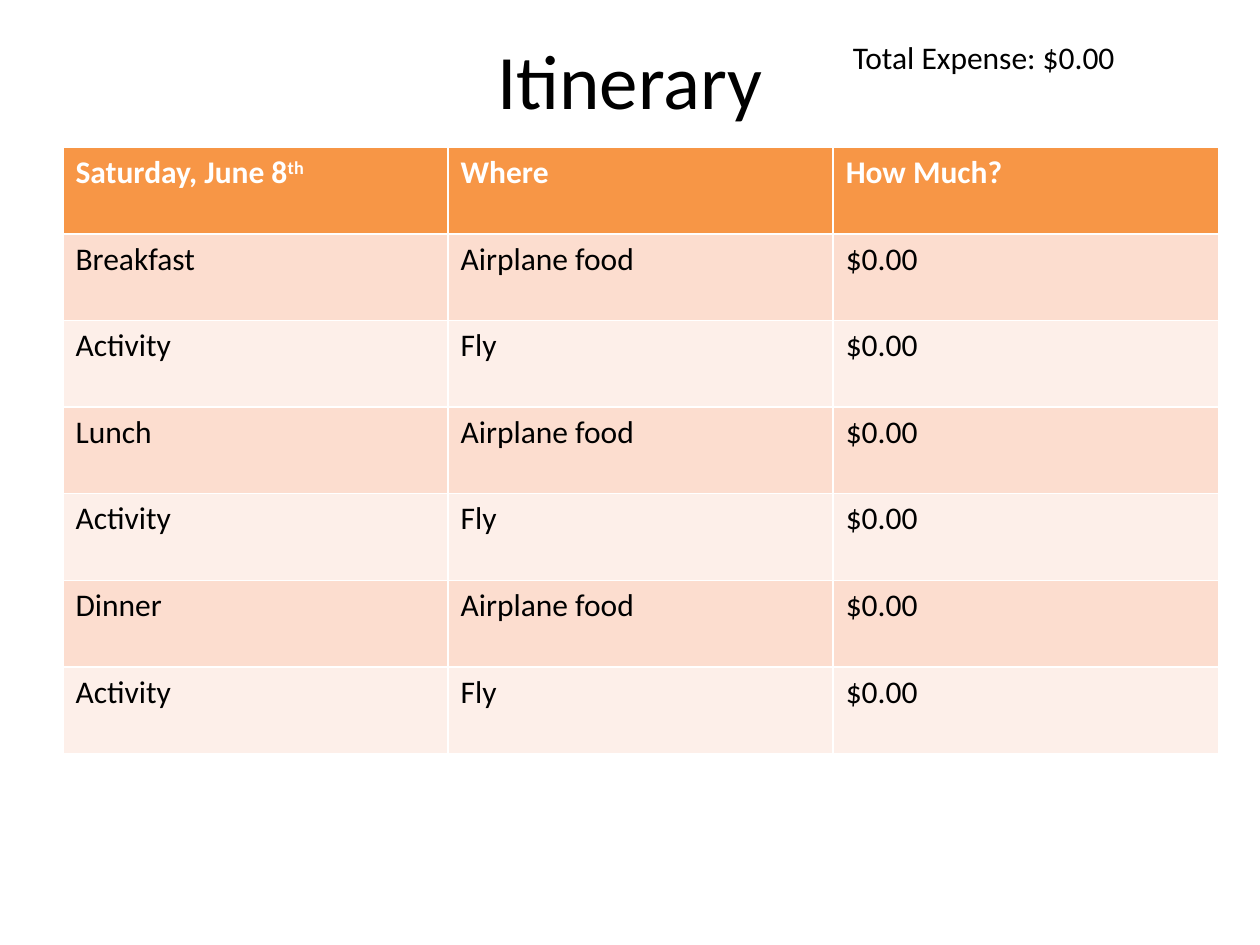
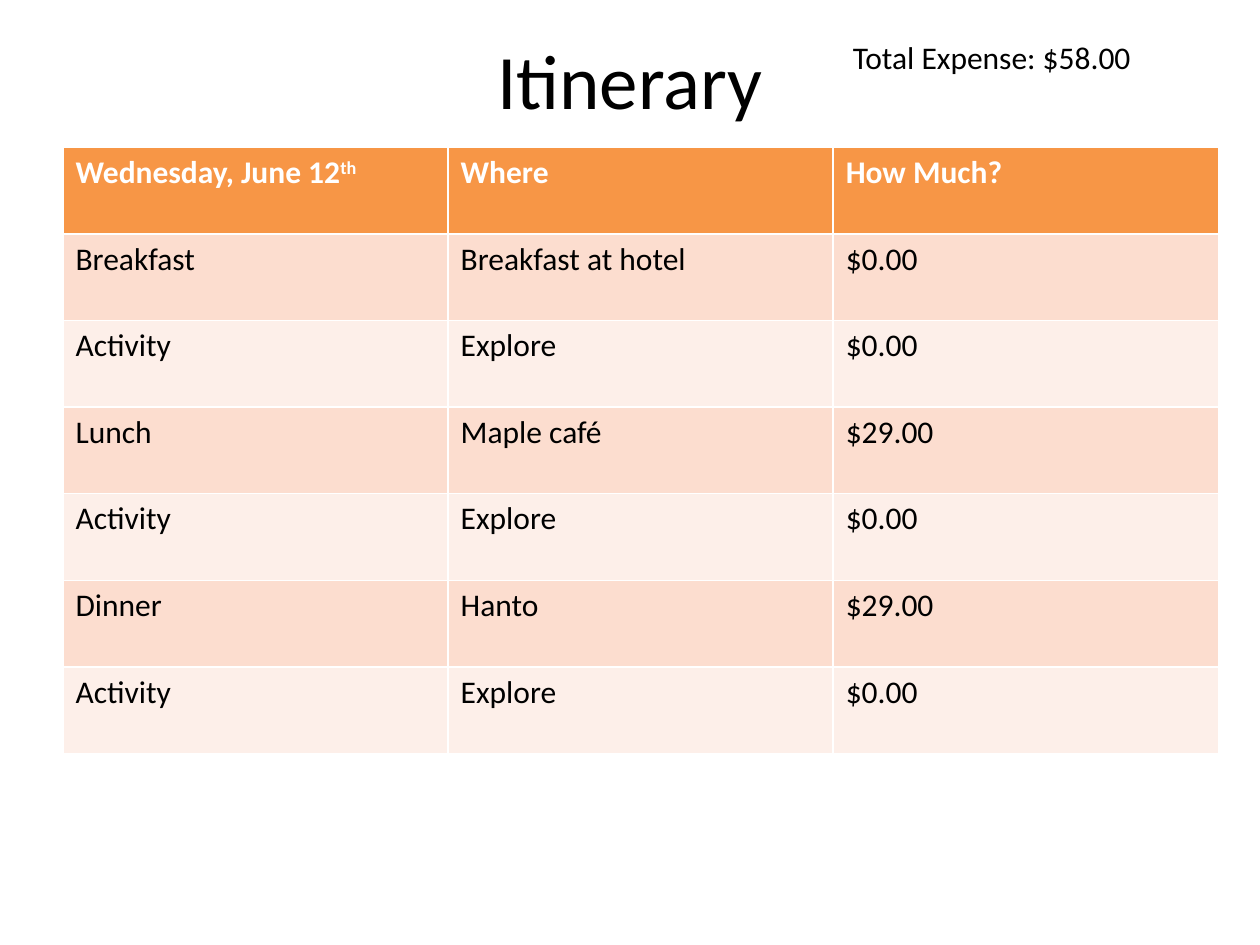
from dataclasses import dataclass
from pptx import Presentation
from pptx.dml.color import RGBColor as Rgb
from pptx.enum import text as t
from pptx.util import Inches, Pt

HEADS = ["Where", "How Much?"]
SLOTS = ["Breakfast", "Activity", "Lunch", "Activity", "Dinner", "Activity"]
DAYS = [
    ("Saturday, June 8", [
        ("Airplane food", 0), ("Fly", 0),
        ("Airplane food", 0), ("Fly", 0),
        ("Airplane food", 0), ("Fly", 0),
    ]),
    ("Wednesday, June 12", [
        ("Breakfast at hotel", 0), ("Explore", 0),
        ("Maple café", 29), ("Explore", 0),
        ("Hanto", 29), ("Explore", 0),
    ]),
]


@dataclass(frozen=True)
class Theme:
    face: str = "Calibri"
    title: int = 44
    body: int = 18
    ink: str = "000000"
    paper: str = "FFFFFF"
    head: str = "F79646"
    bands: tuple = ("FCDDCF", "FDEFE9")


THEME = Theme()


def place(shape, left, top, width, height):
    shape.left, shape.top = Inches(left), Inches(top)
    shape.width, shape.height = Inches(width), Inches(height)


def style(para, size, color, bold=False):
    font = para.font
    font.name, font.size, font.bold = THEME.face, Pt(size), bold
    font.color.rgb = Rgb.from_string(color)


def money(cost):
    return f"${cost:.2f}"


def add_title(slide):
    title = slide.shapes.title
    place(title, 0.5, 0, 9, 1.25)
    title.text_frame.text = "Itinerary"
    title.text_frame.vertical_anchor = t.MSO_ANCHOR.MIDDLE
    para = title.text_frame.paragraphs[0]
    para.alignment = t.PP_ALIGN.CENTER
    style(para, THEME.title, THEME.ink)


def add_total(slide, total):
    box = slide.shapes.add_textbox(
        Inches(6.67), Inches(0.25), Inches(3.08), Inches(0.4))
    frame = box.text_frame
    frame.word_wrap = True
    frame.auto_size = t.MSO_AUTO_SIZE.SHAPE_TO_FIT_TEXT
    frame.text = f"Total Expense: {money(total)}"
    style(frame.paragraphs[0], THEME.body, THEME.ink)


def add_plan(slide, day, stops):
    rows = [[day, *HEADS]]
    rows += [[slot, where, money(cost)]
             for slot, (where, cost) in zip(SLOTS, stops)]
    table = slide.shapes.add_table(
        len(rows), len(rows[0]), Inches(0.5), Inches(1.17),
        Inches(9.17), Inches(4.81)).table
    for r, row in enumerate(rows):
        fill = THEME.bands[(r - 1) % 2] if r else THEME.head
        color = THEME.ink if r else THEME.paper
        for c, words in enumerate(row):
            cell = table.cell(r, c)
            cell.fill.solid()
            cell.fill.fore_color.rgb = Rgb.from_string(fill)
            cell.text = words
            style(cell.text_frame.paragraphs[0], THEME.body, color, r == 0)
    mark = table.cell(0, 0).text_frame.paragraphs[0].add_run()
    mark.text = "th"
    mark.font._element.set("baseline", "30000")


def main():
    deck = Presentation()
    deck.slide_width, deck.slide_height = Inches(10), Inches(7.5)
    for day, stops in DAYS:
        slide = deck.slides.add_slide(deck.slide_layouts[5])
        add_title(slide)
        add_total(slide, sum(cost for _, cost in stops))
        add_plan(slide, day, stops)
    deck.save("out.pptx")


if __name__ == "__main__":
    main()
